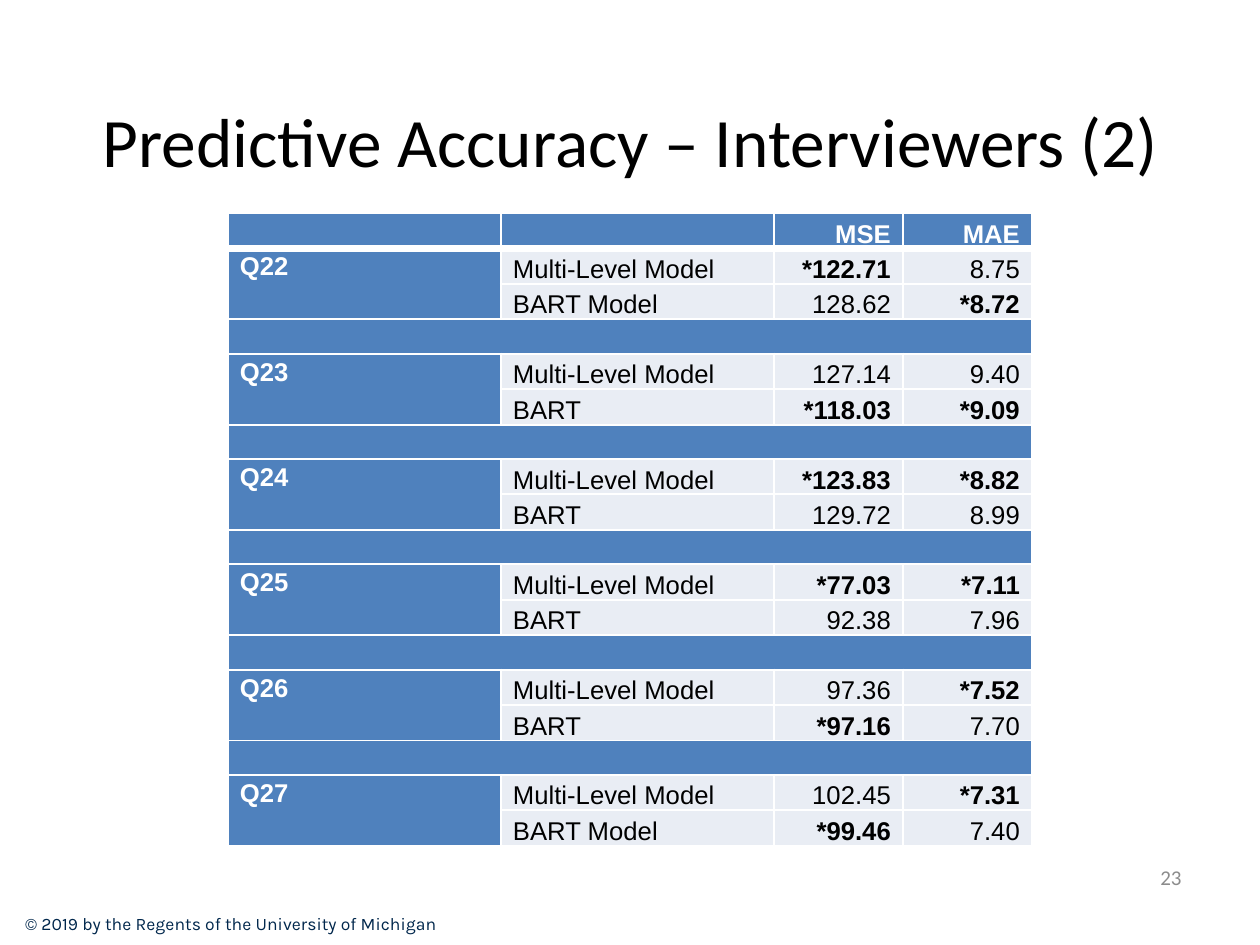
from lxml import etree
from pptx import Presentation
from pptx.dml.color import RGBColor
from pptx.enum.text import MSO_ANCHOR, MSO_AUTO_SIZE, PP_ALIGN
from pptx.oxml.ns import qn
from pptx.util import Pt

PX = 914400 / 168
COLORS = {"black": "000000", "white": "FFFFFF", "blue": "4F81BD",
          "pale": "E9EDF4", "navy": "00274C", "gray": "8C8C8C"}


def px(n):
    return round(n * PX)


def add_text(tf, text, size, font, color, align=PP_ALIGN.LEFT, bold=False):
    p = tf.paragraphs[0]
    p.alignment = align
    r = p.add_run()
    r.text = text
    r.font.size = Pt(size)
    r.font.name = font
    r.font.bold = bold
    r.font.color.rgb = RGBColor.from_string(COLORS[color])
    return p


prs = Presentation()
prs.slide_width, prs.slide_height = px(1260), px(945)
s = prs.slides.add_slide(prs.slide_layouts[5])

# Title
title = s.shapes.title
title.left, title.top, title.width, title.height = px(64), px(84), px(1134), px(111)
tf = title.text_frame
tf.auto_size = MSO_AUTO_SIZE.NONE
tf.vertical_anchor = MSO_ANCHOR.MIDDLE
add_text(tf, "Predictive Accuracy – Interviewers (2)", 29.7, "Calibri", "black",
         PP_ALIGN.CENTER)

# Copyright line and page number
for x, y, w, h, text, size, font, color, align in [
    (10, 904, 480, 39, "© 2019 by the Regents of the University of Michigan",
     7.5, "Karla", "navy", PP_ALIGN.LEFT),
    (904, 852, 294, 50, "23", 9, "Calibri", "gray", PP_ALIGN.RIGHT),
]:
    tf = s.shapes.add_textbox(px(x), px(y), px(w), px(h)).text_frame
    tf.word_wrap = True
    tf.margin_left = px(15)
    tf.vertical_anchor = MSO_ANCHOR.MIDDLE
    add_text(tf, text, size, font, color, align)

# Results: question, then label, MSE and MAE of each model
ML = "Multi-Level Model"
RESULTS = [
    ("Q22", (ML, "*122.71", "8.75"), ("BART Model", "128.62", "*8.72")),
    ("Q23", (ML, "127.14", "9.40"), ("BART", "*118.03", "*9.09")),
    ("Q24", (ML, "*123.83", "*8.82"), ("BART", "129.72", "8.99")),
    ("Q25", (ML, "*77.03", "*7.11"), ("BART", "92.38", "7.96")),
    ("Q26", (ML, "97.36", "*7.52"), ("BART", "*97.16", "7.70")),
    ("Q27", (ML, "102.45", "*7.31"), ("BART Model", "*99.46", "7.40")),
]
rows = [("", "", "MSE", "MAE")]
for question, multilevel, bart in RESULTS:
    if len(rows) > 1:
        rows.append(("", "", "", ""))
    rows += [(question, *multilevel), ("", *bart)]

# Table grid
COLS = [273, 273, 129, 129]
HEIGHT = 620
table = s.shapes.add_table(len(rows), len(COLS), px(228), px(213),
                           px(sum(COLS)), px(HEIGHT)).table
table.first_row = table.horz_banding = False
for col, w in zip(table.columns, COLS):
    col.width = px(w)
for row in table.rows:
    row.height = px(HEIGHT) // len(rows)

# Cells: text, fill and borders
for i, values in enumerate(rows):
    for j, value in enumerate(values):
        cell = table.cell(i, j)
        cell.margin_left = cell.margin_right = px(12)
        cell.margin_top = cell.margin_bottom = 0
        cell.vertical_anchor = MSO_ANCHOR.TOP if j == 0 else MSO_ANCHOR.BOTTOM
        body = i > 0 and j > 0 and value != ""
        cell.fill.solid()
        cell.fill.fore_color.rgb = RGBColor.from_string(
            COLORS["pale" if body else "blue"])
        if value:
            p = add_text(cell.text_frame, value, 11, "Arial",
                         "black" if body else "white",
                         PP_ALIGN.RIGHT if j > 1 else PP_ALIGN.LEFT,
                         not body or value.startswith("*"))
            p.line_spacing = 1.15
            p.space_after = Pt(10)
        else:
            p = cell.text_frame.paragraphs[0]
            etree.SubElement(p._p, qn("a:endParaRPr"), sz="1100")
        tcPr = cell._tc.get_or_add_tcPr()
        for k, side in enumerate(("lnL", "lnR", "lnT", "lnB")):
            thick = (i, side) in ((0, "lnB"), (1, "lnT"))
            ln = etree.Element(qn("a:" + side), w=str(Pt(3 if thick else 1)))
            fill = etree.SubElement(ln, qn("a:solidFill"))
            etree.SubElement(fill, qn("a:srgbClr"), val=COLORS["white"])
            tcPr.insert(k, ln)

# Merge each question over its two models, and each spacer row
for i in range(1, len(rows), 3):
    table.cell(i, 0).merge(table.cell(i + 1, 0))
    if i + 2 < len(rows):
        table.cell(i + 2, 0).merge(table.cell(i + 2, 3))

prs.save("out.pptx")
